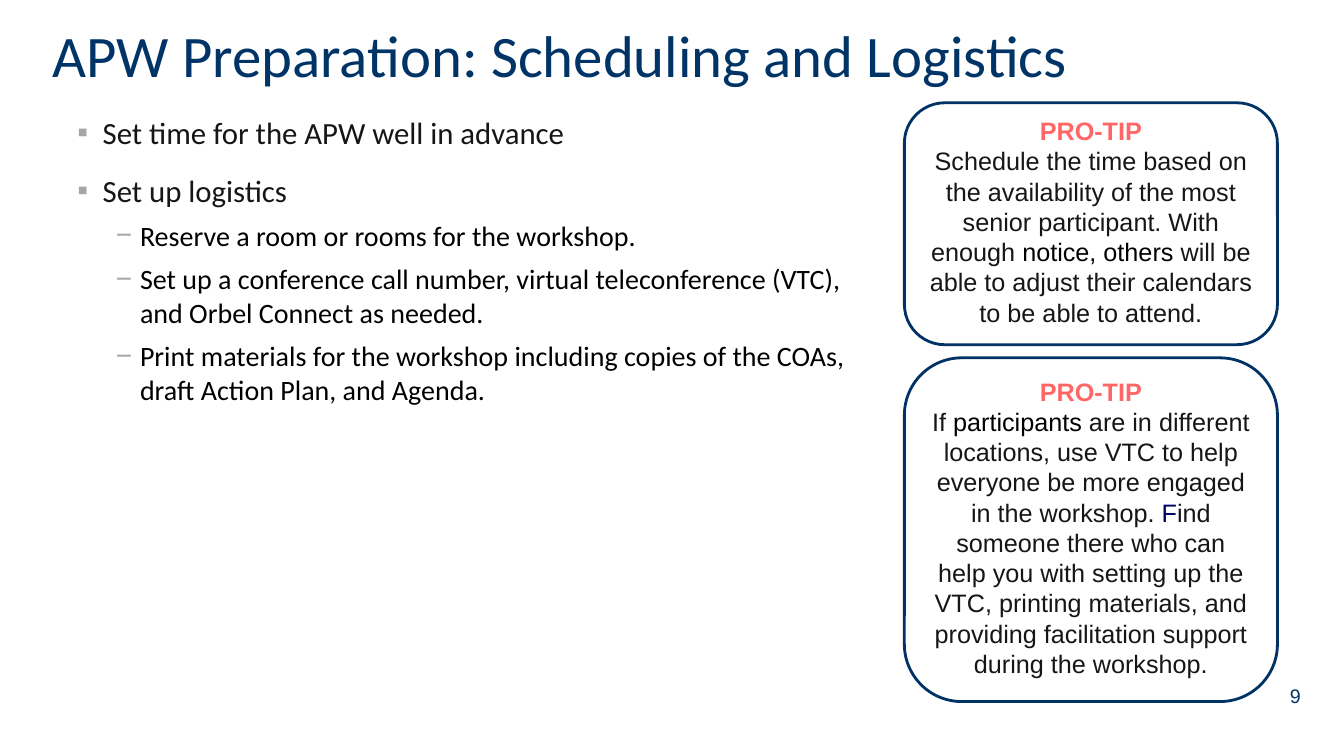
"""Build the slide on scheduling and logistics for an APW."""
from dataclasses import dataclass

import lxml.etree
import pptx
import pptx.dml.color
import pptx.enum.shapes
import pptx.enum.text
import pptx.oxml.ns
import pptx.util

EMU_PER_PX = 9144
COLORS = {
    "title": "003366",
    "outline": "003265",
    "paper": "FFFFFF",
    "text": "161616",
    "black": "000000",
    "navy": "000063",
    "tip": "FF6666",
    "bullet": "A6A6A6",
}
ALIGN = pptx.enum.text.PP_ALIGN
ANCHOR = pptx.enum.text.MSO_ANCHOR


@dataclass(frozen=True)
class Area:
    left: int
    top: int
    width: int
    height: int


@dataclass(frozen=True)
class Level:
    mark: str
    margin: int
    hanging: int
    before: int
    size: int
    color: str


@dataclass(frozen=True)
class Tip:
    area: Area
    pieces: tuple[tuple[str, str], ...]


MAIN = Level("▪", 25, 25, 15, 22, "text")
DETAIL = Level("−", 62, 24, 7, 20, "black")
AGENDA = (
    (MAIN, "Set time for the APW well in advance"),
    (MAIN, "Set up logistics"),
    (DETAIL, "Reserve a room or rooms for the workshop."),
    (DETAIL, "Set up a conference call number, virtual teleconference (VTC), "
             "and Orbel Connect as needed."),
    (DETAIL, "Print materials for the workshop including copies of the COAs, "
             "draft Action Plan, and Agenda."),
)
TIPS = (
    Tip(Area(897, 355, 370, 341), (
        ("If ", "text"),
        ("participants", "black"),
        (" are in different locations, use VTC to help everyone be more "
         "engaged in the workshop. ", "text"),
        ("F", "navy"),
        ("ind someone there who can help you with setting up the VTC, printing "
         "materials, and providing facilitation support during the workshop.", "text"),
    )),
    Tip(Area(897, 102, 370, 240), (
        ("Schedule the time based on the availability of the most senior "
         "participant. With enough ", "text"),
        ("notice, others ", "black"),
        ("will be able to adjust their calendars to be able to attend.", "text"),
    )),
)


def px(length: int) -> pptx.util.Emu:
    """Turn px into EMU."""
    return pptx.util.Emu(length * EMU_PER_PX)


def bounds(area: Area) -> tuple[pptx.util.Emu, ...]:
    """Give the position and size of an area in EMU."""
    return px(area.left), px(area.top), px(area.width), px(area.height)


def rgb(name: str) -> pptx.dml.color.RGBColor:
    """Look up a named colour."""
    return pptx.dml.color.RGBColor.from_string(COLORS[name])


def style(span, font: str, size: int, color: str, bold: bool = False) -> None:
    """Format one run."""
    span.font.name = font
    span.font.size = pptx.util.Pt(size)
    span.font.color.rgb = rgb(color)
    span.font.bold = bold


def add_text(page, area: Area, anchor: ANCHOR = ANCHOR.TOP):
    """Add an empty wrapping text box and return its frame."""
    frame = page.shapes.add_textbox(*bounds(area)).text_frame
    frame.word_wrap = True
    frame.vertical_anchor = anchor
    return frame


def add_label(page, area: Area, text: str, font: str, size: int,
              align: ALIGN, anchor: ANCHOR) -> None:
    """Add a single line of text in the title colour."""
    frame = add_text(page, area, anchor)
    frame.text = text
    para = frame.paragraphs[0]
    para.alignment = align
    style(para.runs[0], font, size, "title")


def add_bullet(para, level: Level) -> None:
    """Give a paragraph its indent, spacing and bullet."""
    para.space_before = pptx.util.Pt(level.before)
    properties = para._p.get_or_add_pPr()
    properties.set("marL", str(px(level.margin)))
    properties.set("indent", str(px(-level.hanging)))
    qn = pptx.oxml.ns.qn
    color = lxml.etree.SubElement(properties, qn("a:buClr"))
    lxml.etree.SubElement(color, qn("a:srgbClr"), val=COLORS["bullet"])
    lxml.etree.SubElement(properties, qn("a:buFont"), typeface="Arial")
    lxml.etree.SubElement(properties, qn("a:buChar"), char=level.mark)


def add_agenda(page, area: Area) -> None:
    """Add the bulleted list."""
    frame = add_text(page, area)
    frame.text = "\n".join(text for _, text in AGENDA)
    for para, (level, _) in zip(frame.paragraphs, AGENDA):
        add_bullet(para, level)
        style(para.runs[0], "Calibri", level.size, level.color)


def add_tip(page, tip: Tip) -> None:
    """Add a rounded box with a heading and advice."""
    box = page.shapes.add_shape(
        pptx.enum.shapes.MSO_SHAPE.ROUNDED_RECTANGLE, *bounds(tip.area))
    box.shadow.inherit = False
    box.fill.solid()
    box.fill.fore_color.rgb = rgb("paper")
    box.line.color.rgb = rgb("outline")
    box.line.width = pptx.util.Pt(2)
    frame = box.text_frame
    frame.word_wrap = True
    frame.vertical_anchor = ANCHOR.MIDDLE
    frame.margin_left = frame.margin_right = px(10)
    frame.margin_top, frame.margin_bottom = px(0), px(5)
    frame.text = "PRO-TIP"
    heading, advice = frame.paragraphs[0], frame.add_paragraph()
    heading.alignment = advice.alignment = ALIGN.CENTER
    style(heading.runs[0], "Arial", 18, "tip", bold=True)
    for text, color in tip.pieces:
        span = advice.add_run()
        span.text = text
        style(span, "Arial", 18, color)


def main() -> None:
    """Build and save the deck."""
    deck = pptx.Presentation()
    deck.slide_width, deck.slide_height = px(1333), px(750)
    page = deck.slides.add_slide(deck.slide_layouts[6])
    add_label(page, Area(989, 674, 311, 52), "9", "Arial", 14,
              ALIGN.RIGHT, ANCHOR.TOP)
    add_label(page, Area(42, 8, 1250, 92),
              "APW Preparation: Scheduling and Logistics", "Calibri", 42,
              ALIGN.LEFT, ANCHOR.MIDDLE)
    add_agenda(page, Area(67, 108, 825, 493))
    for tip in TIPS:
        add_tip(page, tip)
    deck.save("out.pptx")


if __name__ == "__main__":
    main()
